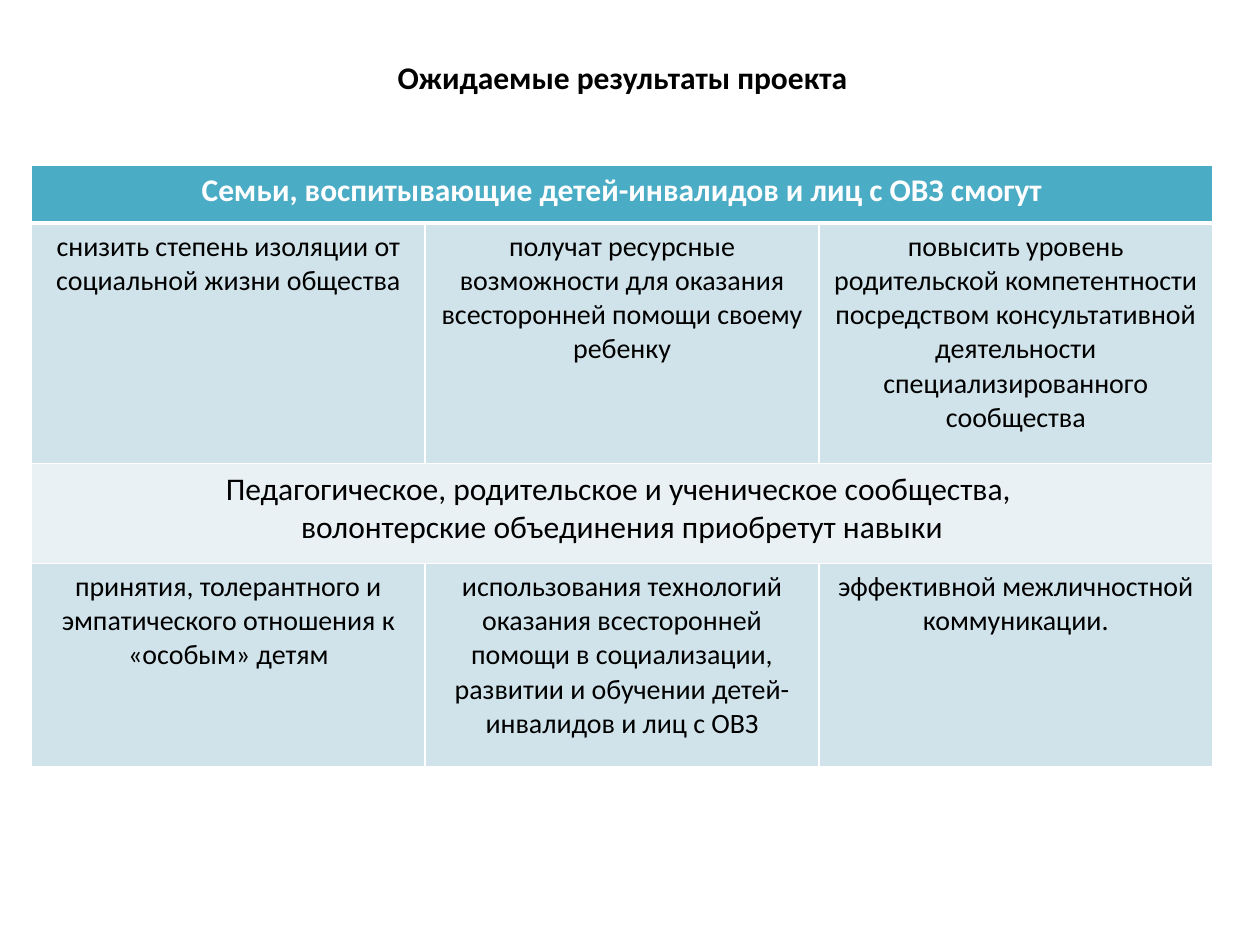
from lxml import etree
from pptx import Presentation
from pptx.dml.color import RGBColor
from pptx.enum.text import PP_ALIGN
from pptx.oxml.ns import qn
from pptx.util import Pt

CENTER = PP_ALIGN.CENTER
FONT = "Calibri"
BLACK, WHITE = "000000", "FFFFFF"
HEADER_FILL, BAND_FILL, PLAIN_FILL = "4BACC6", "D0E3EA", "E9F1F5"


def style_text(frame, size, color, bold):
    for paragraph in frame.paragraphs:
        paragraph.alignment = CENTER
        for run in paragraph.runs:
            run.font.name = FONT
            run.font.size = Pt(size)
            run.font.bold = bold
            run.font.color.rgb = RGBColor.from_string(color)


def add_borders(cell, widths):
    """Draw white borders; widths maps the sides L, R, T, B, in that order, to points."""
    properties = cell._tc.get_or_add_tcPr()
    for side, width in widths.items():
        line = etree.SubElement(properties, qn(f"a:ln{side}"), w=str(Pt(width)))
        fill = etree.SubElement(line, qn("a:solidFill"))
        etree.SubElement(fill, qn("a:srgbClr"), val=WHITE)


prs = Presentation()
prs.slide_width, prs.slide_height = Pt(720), Pt(540)
slide = prs.slides.add_slide(prs.slide_layouts[6])

title = slide.shapes.add_textbox(Pt(41), Pt(29.5), Pt(629.5), Pt(29)).text_frame
title.word_wrap = True
title.text = "Ожидаемые результаты проекта"
style_text(title, 18, BLACK, True)

# Each row: height, fill, text size, text colour, bold, cell texts
rows = [
    (33, HEADER_FILL, 18, WHITE, True,
     ["Семьи, воспитывающие детей-инвалидов и лиц с ОВЗ смогут"]),
    (137.5, BAND_FILL, 16, BLACK, False,
     ["снизить степень изоляции от социальной жизни общества",
      "получат ресурсные возможности для оказания всесторонней помощи своему ребенку",
      "повысить уровень родительской компетентности посредством консультативной "
      "деятельности специализированного сообщества"]),
    (57, PLAIN_FILL, 18, BLACK, False,
     ["Педагогическое, родительское и ученическое сообщества, \n"
      "волонтерские объединения приобретут навыки"]),
    (116, BAND_FILL, 16, BLACK, False,
     ["принятия, толерантного и эмпатического отношения к «особым» детям",
      "использования технологий оказания всесторонней помощи в социализации, "
      "развитии и обучении детей-инвалидов и лиц с ОВЗ",
      "эффективной межличностной коммуникации."]),
]
column_count = 3
column_width = 225
table_height = sum(row[0] for row in rows)

results = slide.shapes.add_table(
    len(rows), column_count, Pt(18), Pt(94.5), Pt(column_width * column_count), Pt(table_height)
).table
for column in results.columns:
    column.width = Pt(column_width)

for index, (height, fill, size, color, bold, texts) in enumerate(rows):
    results.rows[index].height = Pt(height)
    widths = {"L": 1, "R": 1, "T": 3 if index == 1 else 1, "B": 3 if index == 0 else 1}
    for position in range(column_count):
        cell = results.cell(index, position)
        add_borders(cell, widths)
        cell.fill.solid()
        cell.fill.fore_color.rgb = RGBColor.from_string(fill)
    if len(texts) == 1:
        results.cell(index, 0).merge(results.cell(index, column_count - 1))
    for position, text in enumerate(texts):
        frame = results.cell(index, position).text_frame
        frame.text = text
        style_text(frame, size, color, bold)

prs.save("out.pptx")
